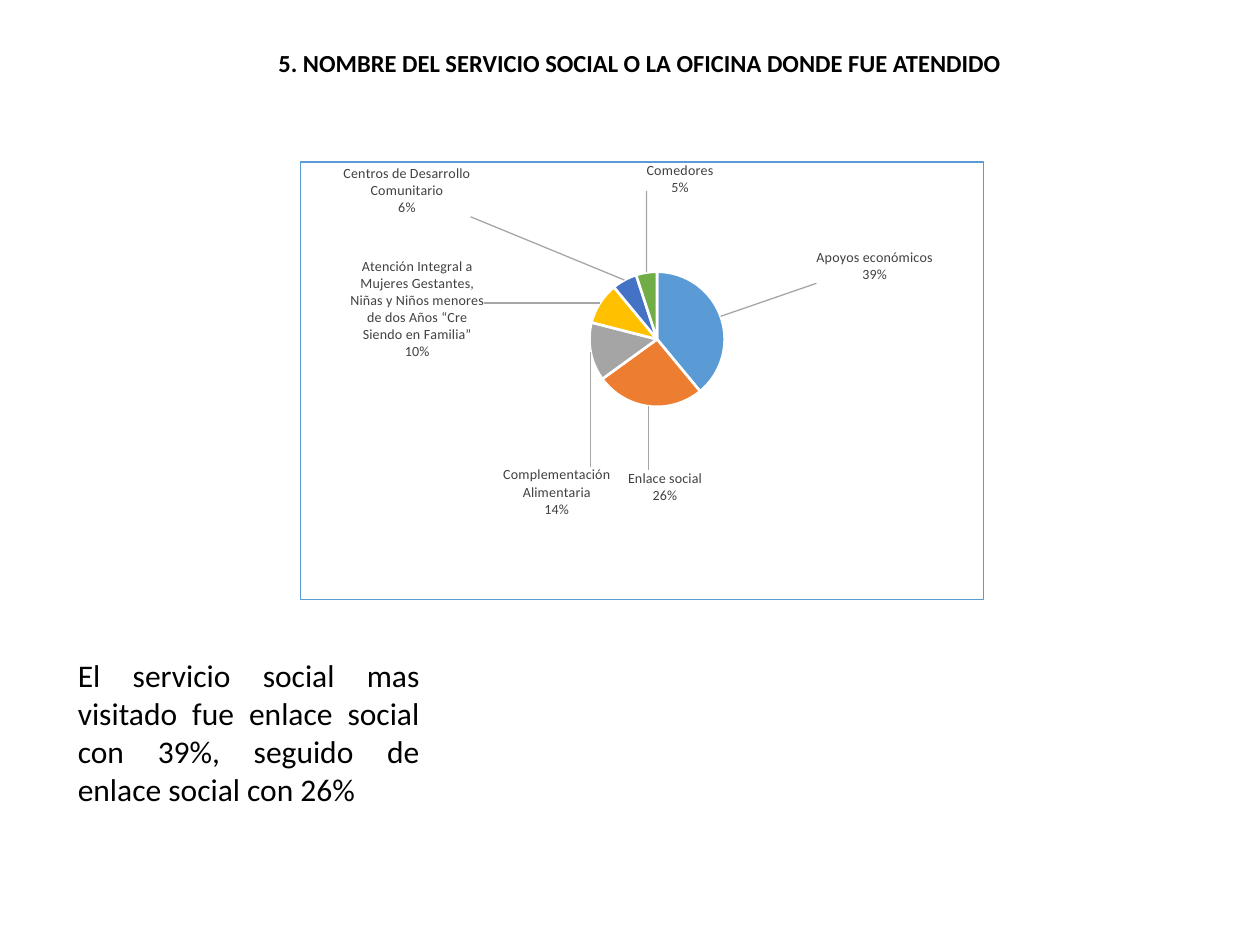
from lxml.etree import SubElement
from pptx import Presentation
from pptx.chart.data import CategoryChartData
from pptx.dml.color import RGBColor
from pptx.enum.chart import XL_CHART_TYPE as ChartType, XL_LABEL_POSITION as LabelPosition
from pptx.enum.text import MSO_AUTO_SIZE as AutoSize, PP_ALIGN as Align
from pptx.oxml import parse_xml
from pptx.oxml.ns import nsdecls, qn
from pptx.util import Pt

FONT = "Calibri"
# category, percent, slice colour, label shift as a share of the chart size
SERVICES = [
    ("Apoyos económicos", 39, "5B9BD5", (0.13, -0.07)),
    ("Enlace social", 26, "ED7D31", (0.08, 0.13)),
    ("Complementación Alimentaria", 14, "A5A5A5", (0.04, 0.26)),
    ("Atención Integral a Mujeres Gestantes, Niñas y Niños menores de dos Años "
     "“Cre Siendo en Familia”", 10, "FFC000", (-0.16, 0.14)),
    ("Centros de Desarrollo Comunitario", 6, "4472C4", (-0.22, -0.13)),
    ("Comedores", 5, "70AD47", (0.1, -0.17)),
]


def color(value):
    return RGBColor.from_string(value)


def style_font(font, size, value, bold=False):
    font.name, font.size, font.bold = FONT, Pt(size), bold
    font.color.rgb = color(value)


def add_text(page, left, top, width, height, text, size, bold=False, align=None):
    box = page.shapes.add_textbox(Pt(left), Pt(top), Pt(width), Pt(height))
    frame = box.text_frame
    frame.word_wrap = True
    frame.auto_size = AutoSize.SHAPE_TO_FIT_TEXT
    frame.text = text
    para = frame.paragraphs[0]
    para.alignment = align
    style_font(para.runs[0].font, size, "000000", bold)


def manual_layout(x, y, width=None, height=None):
    """Layout in shares of the chart: a label shift, or an inner plot area."""
    layout = parse_xml(f"<c:layout {nsdecls('c')}><c:manualLayout/></c:layout>")
    settings = [("x", x), ("y", y)]
    if width:
        settings = [("layoutTarget", "inner"), ("xMode", "edge"), ("yMode", "edge"),
                    *settings, ("w", width), ("h", height)]
    for name, value in settings:
        SubElement(layout[0], qn(f"c:{name}")).set("val", str(value))
    return layout


def line_properties(value, width):
    return (f'<c:spPr {nsdecls("c", "a")}><a:ln w="{Pt(width)}"><a:solidFill>'
            f'<a:srgbClr val="{value}"/></a:solidFill></a:ln></c:spPr>')


def show_name_and_percent(labels):
    """Put category and percentage on two lines in a label element."""
    for name, shown in (("showVal", 0), ("showCatName", 1), ("showPercent", 1)):
        labels.find(qn(f"c:{name}")).set("val", str(shown))
    labels.find(qn("c:showBubbleSize")).addnext(
        parse_xml(f"<c:separator {nsdecls('c')}>\n</c:separator>"))


def label_slices(chart):
    series = chart.plots[0].series[0]
    labels = series.data_labels
    style_font(labels.font, 8, "404040")
    labels.position = LabelPosition.OUTSIDE_END
    for index, (_, _, fill, shift) in enumerate(SERVICES):
        point = series.points[index]
        point.format.fill.solid()
        point.format.fill.fore_color.rgb = color(fill)
        point.format.line.color.rgb = color("FFFFFF")
        point.format.line.width = Pt(1.5)
        style_font(point.data_label.font, 8, "404040")
        point.data_label.position = LabelPosition.OUTSIDE_END
        label = chart.element.xpath(f".//c:dLbl[c:idx/@val={index}]")[0]
        label.find(qn("c:idx")).addnext(manual_layout(*shift))
        show_name_and_percent(label)
    all_labels = chart.element.xpath(".//c:ser/c:dLbls")[0]
    show_name_and_percent(all_labels)
    leader = all_labels.find(qn("c:showLeaderLines"))
    if leader is None:
        leader = SubElement(all_labels, qn("c:showLeaderLines"))
    leader.set("val", "1")
    leader.addnext(parse_xml(f"<c:leaderLines {nsdecls('c')}>"
                             f"{line_properties('A6A6A6', 0.75)}</c:leaderLines>"))


def add_services_pie(page):
    data = CategoryChartData()
    data.categories = [service[0] for service in SERVICES]
    data.add_series("Series 1", [service[1] for service in SERVICES])
    chart = page.shapes.add_chart(
        ChartType.PIE, Pt(171.4), Pt(92.2), Pt(391), Pt(250.6), data).chart
    chart.has_legend = chart.has_title = False
    chart.plots[0].vary_by_categories = True
    style_font(chart.font, 10, "000000")
    label_slices(chart)
    plot_area = chart.element.xpath(".//c:plotArea")[0]
    for layout in plot_area.findall(qn("c:layout")):
        plot_area.remove(layout)
    plot_area.insert(0, manual_layout(0.245, 0.251, 0.554, 0.309))
    chart.element.find(qn("c:chart")).addnext(parse_xml(line_properties("5B9BD5", 0.75)))


def main():
    deck = Presentation()
    deck.slide_width, deck.slide_height = Pt(720), Pt(540)
    page = deck.slides.add_slide(deck.slide_layouts[6])
    add_text(page, 152, 24, 489, 24.2,
             "5. NOMBRE DEL SERVICIO SOCIAL O LA OFICINA DONDE FUE ATENDIDO", 14, bold=True)
    add_services_pie(page)
    add_text(page, 37.4, 371.5, 209.5, 116.6,
             "El servicio social mas visitado fue enlace social con 39%, "
             "seguido de enlace social con 26%", 18, align=Align.JUSTIFY)
    deck.save("out.pptx")


if __name__ == "__main__":
    main()
